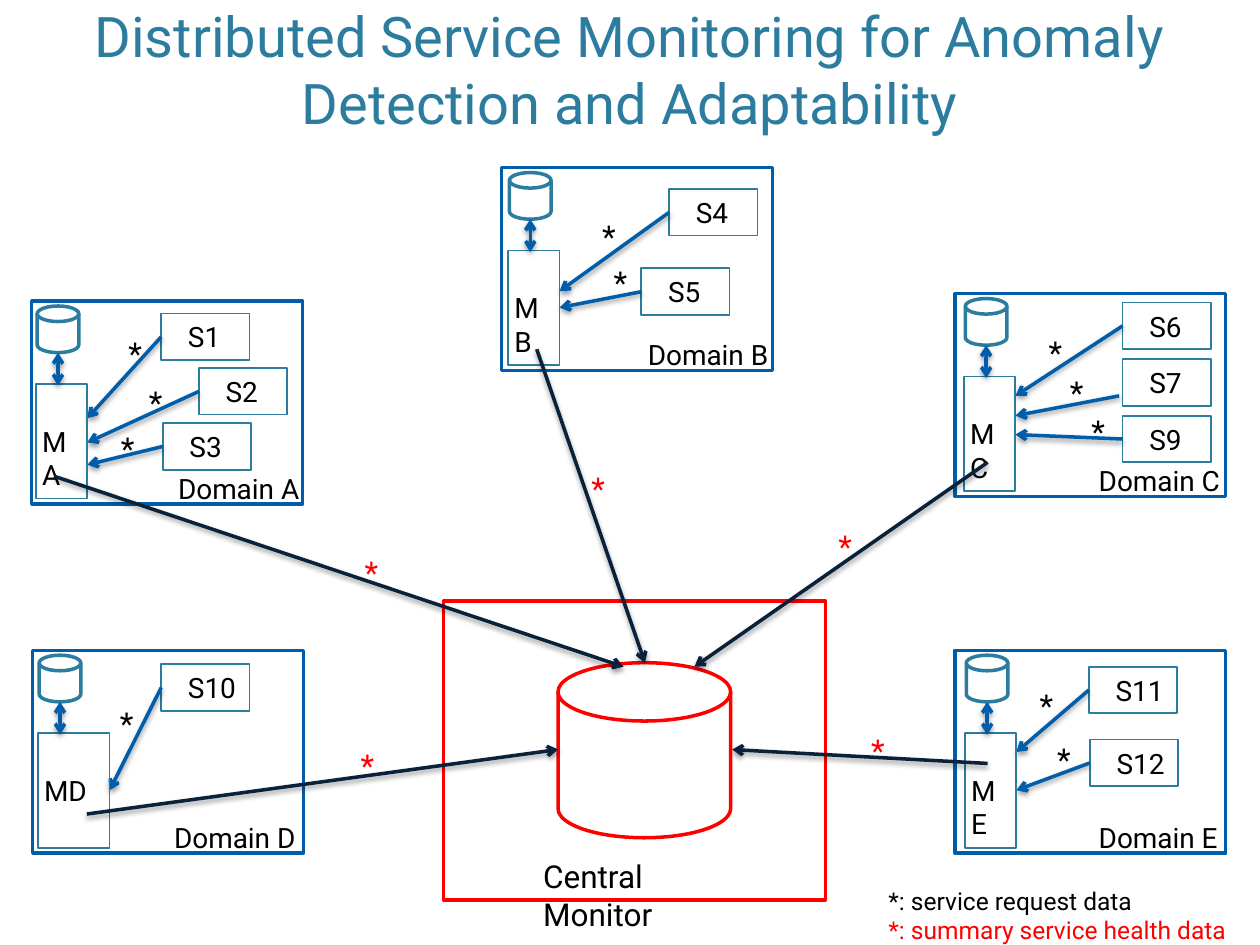
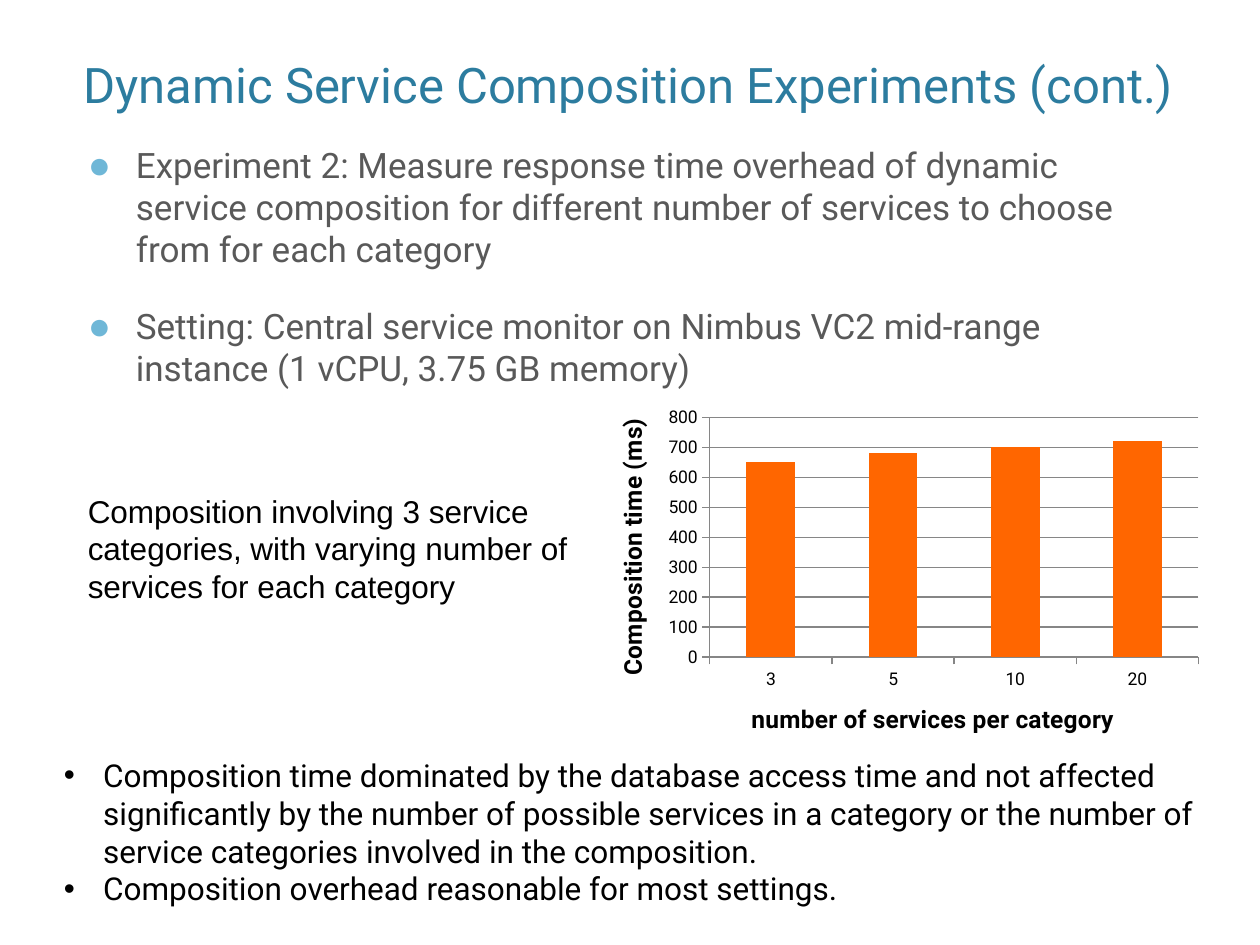
from lxml.etree import SubElement
from pptx import Presentation
from pptx.chart.data import CategoryChartData
from pptx.dml.color import RGBColor
from pptx.enum.chart import XL_CHART_TYPE as ChartType, XL_TICK_MARK as TickMark
from pptx.enum.shapes import MSO_CONNECTOR as Connector, MSO_SHAPE as Preset
from pptx.enum.text import MSO_ANCHOR as Anchor, PP_ALIGN as Align
from pptx.oxml.ns import qn
from pptx.util import Cm, Pt

COLORS = {
    "title": "2C7C9F", "frame": "005DAA", "link": "09213B", "central": "FF0000",
    "text": "000000", "body": "595959", "bullet": "6FB7D7", "bar": "FF6600",
    "grid": "868686", "white": "FFFFFF",
}
FONT = "Roboto"
TIGHT = 0.13
FRAME_SIZE = (5.46, 4.09)
DISK_SIZE = (0.84, 0.94)
SERVICE_SIZE = (1.78, 0.94)
STAR_SIZE = (0.61, 1.02)
MONITOR_HEIGHT = 2.31
DISK_OFFSET = 0.1
MONITOR_OFFSET = 1.67
CENTRAL_FRAME = (8.94, 12.12, 7.7, 6.02)
CENTRAL_DISK = (11.25, 13.36, 3.48, 3.53)

DOMAINS = [
    {"name": "A", "at": (0.64, 6.07), "monitor": (0.08, 1.04), "label": 2.82,
     "services": [("S1", 3.25, 6.32, 8.43, (2.46, 6.6)),
                  ("S2", 4.01, 7.42, 8.92, (2.87, 7.59)),
                  ("S3", 3.28, 8.53, 9.37, (2.31, 8.51))],
     "summary": ((1.09, 9.6), (12.57, 13.44)), "star": (7.22, 11.02)},
    {"name": "B", "at": (10.11, 3.38), "monitor": (0.13, 1.04), "label": 2.82,
     "services": [("S4", 13.49, 3.81, 5.87, (12.01, 4.24)),
                  ("S5", 12.93, 5.41, 6.2, (12.24, 5.18))],
     "summary": ((10.82, 7.04), (13, 13.36)), "star": (11.79, 9.32)},
    {"name": "C", "at": (19.25, 5.92), "monitor": (0.18, 1.04), "label": 2.77,
     "services": [("S6", 22.63, 6.1, 7.98, (21.01, 6.58)),
                  ("S7", 22.63, 7.24, 8.38, (21.44, 7.39), (22.56, 7.98)),
                  ("S9", 22.63, 8.38, 8.76, (21.87, 8.18))],
     "summary": ((19.91, 9.32), (14, 13.44)), "star": (16.77, 10.49)},
    {"name": "D", "at": (0.66, 13.11), "monitor": (0.1, 1.45), "label": 2.72,
     "services": [("S10", 3.25, 13.39, 15.93, (2.29, 14.07))],
     "summary": ((1.75, 16.41), (11.25, 15.11)), "star": (7.14, 14.91)},
    {"name": "E", "at": (19.25, 13.11), "monitor": (0.2, 1.04), "label": 2.77,
     "services": [("S11", 21.95, 13.44, 15.16, (20.83, 13.69)),
                  ("S12", 21.97, 14.91, 15.93, (21.18, 14.78))],
     "summary": ((19.91, 15.39), (14.76, 15.11)), "star": (17.43, 14.61)},
]
LEGEND = [("*: service request data", "text"), ("*: summary service health data", "central")]
EXPERIMENT = [
    "Experiment 2: Measure response time overhead of dynamic service composition "
    "for different number of services to choose from for each category",
    "Setting: Central service monitor on Nimbus VC2 mid-range instance (1 vCPU, 3.75 GB memory)",
]
CHART_NOTE = ("Composition involving 3 service categories, with varying number of "
              "services for each category")
FINDINGS = [
    "Composition time dominated by the database access time and not affected significantly "
    "by the number of possible services in a category or the number of service categories "
    "involved in the composition.",
    "Composition overhead reasonable for most settings.",
]
COMPOSITION_TIMES = {"3": 650, "5": 680, "10": 700, "20": 720}


def rgb(name):
    return RGBColor.from_string(COLORS[name])


def set_values(target, values):
    for name, value in values.items():
        setattr(target, name, value)


def add_xml(parent, tag, **attributes):
    return SubElement(parent, qn(tag), {key: str(value) for key, value in attributes.items()})


def style_font(font, size, color="text", name=FONT, bold=False):
    set_values(font, {"size": Pt(size), "name": name, "bold": bold})
    font.color.rgb = rgb(color)


def write(shape, lines, size, color="text", name=FONT, align=Align.LEFT, anchor=Anchor.TOP,
          insets=(TIGHT,) * 4, wrap=True, bullet=None):
    frame = shape.text_frame
    left, top, right, bottom = map(Cm, insets)
    set_values(frame, {"word_wrap": wrap, "vertical_anchor": anchor, "margin_left": left,
                       "margin_top": top, "margin_right": right, "margin_bottom": bottom})
    for index, line in enumerate(lines):
        text, line_color = line if isinstance(line, tuple) else (line, color)
        paragraph = frame.paragraphs[0] if index == 0 else frame.add_paragraph()
        paragraph.alignment = align
        run = paragraph.add_run()
        run.text = text
        style_font(run.font, size, line_color, name)
        if bullet:
            add_bullet(paragraph, **bullet)


def add_bullet(paragraph, symbol, color, indent, percent, before):
    paragraph.space_before = Pt(before)
    properties = paragraph._p.get_or_add_pPr()
    properties.set("marL", str(Cm(indent)))
    properties.set("indent", str(-Cm(indent)))
    add_xml(add_xml(properties, "a:buClr"), "a:srgbClr", val=COLORS[color])
    add_xml(properties, "a:buSzPct", val=percent * 1000)
    add_xml(properties, "a:buFont", typeface="Arial")
    add_xml(properties, "a:buChar", char=symbol)


def add_text(slide, box, lines, size, **style):
    write(slide.shapes.add_textbox(*map(Cm, box)), lines, size, **style)


def add_title(slide, box, text, size):
    add_text(slide, box, [text], size, color="title", align=Align.CENTER,
             anchor=Anchor.BOTTOM, insets=(0.25, TIGHT, 0.25, TIGHT))


def add_outline(slide, preset, box, color, width, fill=None):
    shape = slide.shapes.add_shape(preset, *map(Cm, box))
    shape.shadow.inherit = False
    if fill:
        shape.fill.solid()
        shape.fill.fore_color.rgb = rgb(fill)
    else:
        shape.fill.background()
    shape.line.color.rgb = rgb(color)
    shape.line.width = Pt(width)
    return shape


def add_arrow(slide, start, end, color, double=False):
    connector = slide.shapes.add_connector(Connector.STRAIGHT, *map(Cm, (*start, *end)))
    connector.line.color.rgb = rgb(color)
    connector.line.width = Pt(2)
    properties = connector._element.spPr
    line = properties.find(qn("a:ln"))
    for tag in ("a:headEnd", "a:tailEnd") if double else ("a:tailEnd",):
        add_xml(line, tag, type="arrow")
    shadow = add_xml(add_xml(properties, "a:effectLst"), "a:outerShdw", blurRad=Pt(3),
                     dist=Pt(1.6), dir=90 * 60000, rotWithShape=0)
    add_xml(add_xml(shadow, "a:srgbClr", val=COLORS["text"]), "a:alpha", val=38000)


def add_star(slide, position, color="text"):
    add_text(slide, (*position, *STAR_SIZE), ["*"], 18, color=color, wrap=False)


def add_domain(slide, domain):
    left, top = domain["at"]
    monitor_shift, monitor_width = domain["monitor"]
    monitor_left, monitor_top = left + monitor_shift, top + MONITOR_OFFSET
    disk_left, disk_top = monitor_left + 0.03, top + DISK_OFFSET
    disk_width, disk_height = DISK_SIZE
    disk_middle = disk_left + disk_width / 2

    add_outline(slide, Preset.FLOWCHART_PROCESS, (left, top, *FRAME_SIZE), "frame", 2)
    add_text(slide, (left + domain["label"], top + 3.3, 2.72, 0.94),
             [f"Domain {domain['name']}"], 16, wrap=False)
    for name, x, y, end_y, star, *start in domain["services"]:
        box = add_outline(slide, Preset.RECTANGLE, (x, y, *SERVICE_SIZE), "title", 1)
        write(box, [name], 16, anchor=Anchor.MIDDLE, insets=(0.54, TIGHT, 0, TIGHT))
        origin = start[0] if start else (x, y + SERVICE_SIZE[1] / 2)
        add_arrow(slide, origin, (monitor_left + monitor_width, end_y), "frame")
        add_star(slide, star)
    monitor = add_outline(slide, Preset.RECTANGLE,
                          (monitor_left, monitor_top, monitor_width, MONITOR_HEIGHT), "title", 1)
    write(monitor, [f"M{domain['name']}"], 16, insets=(TIGHT, 0.81, TIGHT, TIGHT))
    add_outline(slide, Preset.FLOWCHART_MAGNETIC_DISK, (disk_left, disk_top, *DISK_SIZE),
                "title", 2, fill="white")
    add_arrow(slide, (disk_middle, disk_top + disk_height), (disk_middle, monitor_top + 0.03),
              "frame", double=True)
    add_arrow(slide, *domain["summary"], "link")
    add_star(slide, domain["star"], "central")


def place(parent, index, **fractions):
    for old in parent.findall(qn("c:layout")):
        parent.remove(old)
    layout = add_xml(parent, "c:layout")
    parent.insert(index, layout)
    manual = add_xml(layout, "c:manualLayout")
    if "w" in fractions:
        add_xml(manual, "c:layoutTarget", val="inner")
    for side in ("x", "y"):
        add_xml(manual, f"c:{side}Mode", val="edge")
    for name, value in fractions.items():
        add_xml(manual, f"c:{name}", val=value)


def add_composition_chart(slide, box):
    data = CategoryChartData()
    data.categories = list(COMPOSITION_TIMES)
    data.add_series("Series 1", list(COMPOSITION_TIMES.values()))
    chart = slide.shapes.add_chart(ChartType.COLUMN_CLUSTERED, *map(Cm, box), data).chart
    set_values(chart, {"has_legend": False, "has_title": False})
    style_font(chart.font, 10)
    plot = chart.plots[0]
    set_values(plot, {"gap_width": 150, "vary_by_categories": False})
    fill = plot.series[0].format.fill
    fill.solid()
    fill.fore_color.rgb = rgb("bar")

    titles = [(chart.category_axis, "number of services per category", (0.25, 0.82)),
              (chart.value_axis, "Composition time (ms)", (0.03, 0.04))]
    for axis, text, (x, y) in titles:
        set_values(axis, {"major_tick_mark": TickMark.OUTSIDE, "minor_tick_mark": TickMark.NONE})
        axis.format.line.color.rgb = rgb("grid")
        paragraph = axis.axis_title.text_frame.paragraphs[0]
        run = paragraph.add_run()
        run.text = text
        style_font(run.font, 14, bold=True)
        place(axis.axis_title._element, 1, x=x, y=y)
    set_values(chart.value_axis, {"minimum_scale": 0, "maximum_scale": 800, "major_unit": 100,
                                  "has_major_gridlines": True})
    chart.value_axis.major_gridlines.format.line.color.rgb = rgb("grid")
    place(chart._chartSpace.chart.plotArea, 0, x=0.19, y=0.05, w=0.79, h=0.66)


def build_monitoring(slide):
    add_title(slide, (1.27, 0.3, 22.86, 2.57),
              "Distributed Service Monitoring for Anomaly Detection and Adaptability", 32)
    add_outline(slide, Preset.FLOWCHART_MAGNETIC_DISK, CENTRAL_DISK, "central", 2, fill="white")
    add_outline(slide, Preset.FLOWCHART_PROCESS, CENTRAL_FRAME, "central", 2)
    add_text(slide, (10.82, 17.15, 4.2, 1.02), ["Central Monitor"], 18)
    for domain in DOMAINS:
        add_domain(slide, domain)
    add_text(slide, (17.78, 17.73, 7.21, 1.45), LEGEND, 14, wrap=False)


def build_experiments(slide):
    roomy = (0.25, TIGHT, 0.25, TIGHT)
    add_text(slide, (1.52, 2.77, 22.35, 6.3), EXPERIMENT, 20, color="body", insets=roomy,
             bullet={"symbol": "●", "color": "bullet", "indent": 0.97, "percent": 110,
                     "before": 20})
    add_title(slide, (0.51, 0.3, 24.31, 2.11), "Dynamic Service Composition Experiments (cont.)", 28)
    add_composition_chart(slide, (11.94, 8.05, 12.47, 7.32))
    add_text(slide, (1.52, 9.78, 10.72, 2.57), [CHART_NOTE], 18, name="Arial", insets=roomy)
    add_text(slide, (1.04, 15.11, 23.37, 3.33), FINDINGS, 18, insets=roomy,
             bullet={"symbol": "•", "color": "text", "indent": 0.79, "percent": 100, "before": 0})


def main():
    presentation = Presentation()
    set_values(presentation, {"slide_width": Cm(25.4), "slide_height": Cm(19.05)})
    for build in (build_monitoring, build_experiments):
        build(presentation.slides.add_slide(presentation.slide_layouts[6]))
    presentation.save("out.pptx")


if __name__ == "__main__":
    main()
